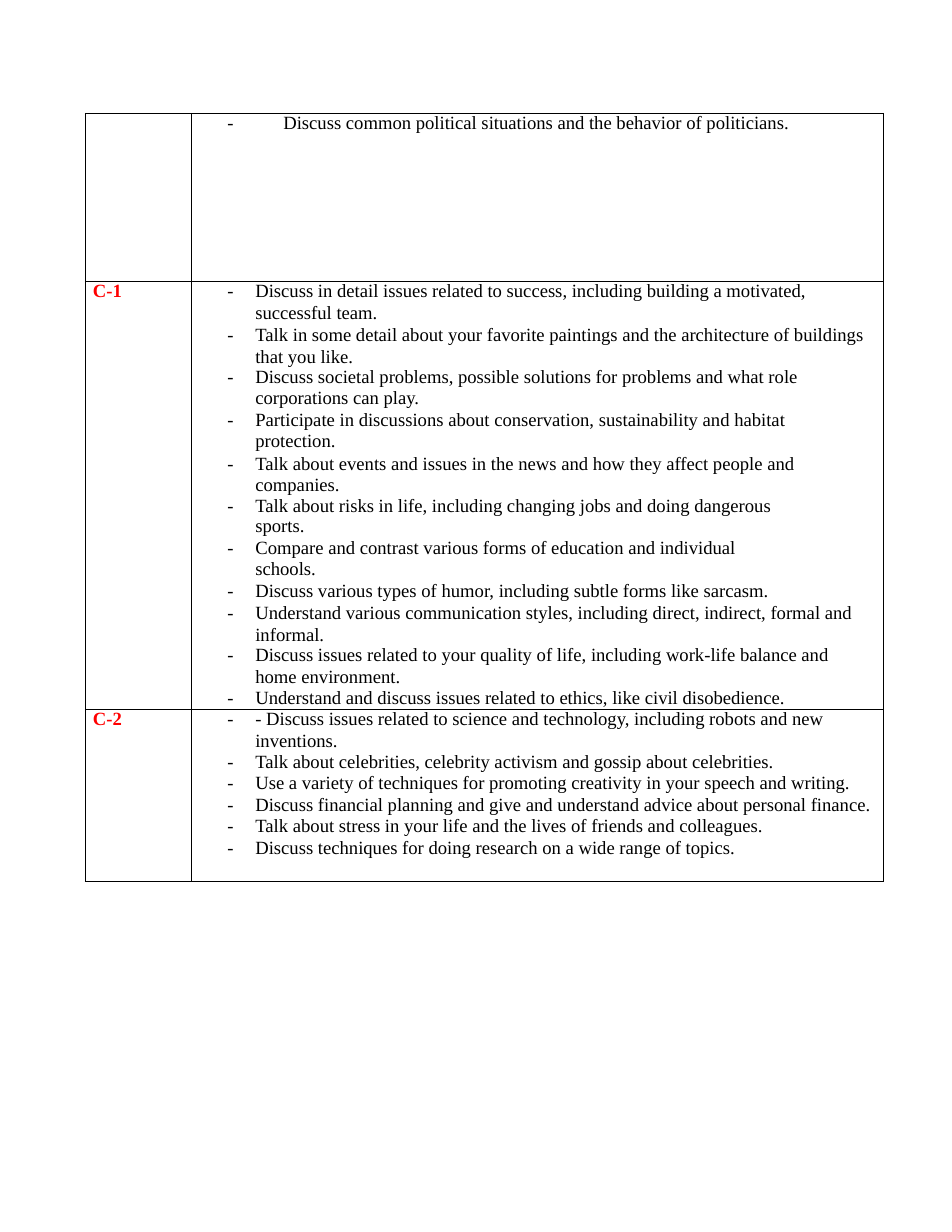
from lxml import etree
from pptx import Presentation
from pptx.dml.color import RGBColor
from pptx.oxml.ns import qn
from pptx.util import Inches, Pt

FONT = "Times New Roman"
BLACK, RED = "000000", "FF0000"
LABEL_INDENT, BULLET_INDENT, HANGING, TAB = 0.07, 0.57, -0.25, 0.57
COLUMNS = (0.95, 6.18)
ROWS = (1.5, 3.65, 1.54)

POLITICS = "-\tDiscuss common political situations and the behavior of politicians."

# Each line: text, line spacing in points, then any further format
C1 = [
    ("Discuss in detail issues related to success, including building a motivated,", 13.2, {}),
    ("successful team.", 13.8, {"bullet": False}),
    ("Talk in some detail about your favorite paintings and the architecture of buildings  that you like.",
     13.9, {"before": 0.5}),
    ("Discuss societal problems, possible solutions for problems and what role", 13.1, {}),
    ("corporations can play.", 13.8, {"bullet": False}),
    ("Participate in discussions about conservation, sustainability and habitat protection.",
     13.8, {"right": 0.5}),
    ("Talk about events and issues in the news and how they affect people and  companies.",
     13.7, {"before": 0.8, "right": 0.5}),
    ("Talk about risks in life, including changing jobs and doing dangerous sports.",
     13.2, {"right": 0.9}),
    ("Compare and contrast various forms of education and individual schools.",
     13.8, {"right": 0.9}),
    ("Discuss various types of humor, including subtle forms like sarcasm.", 13.8, {}),
    ("Understand various communication styles, including direct, indirect, formal and  informal.",
     13.9, {"before": 0.5}),
    ("Discuss issues related to your quality of life, including work-life balance and", 13.1, {}),
    ("home environment.", 13.8, {"bullet": False}),
    ("Understand and discuss issues related to ethics, like civil disobedience.", 14.1, {}),
]
C2 = [
    ("- Discuss issues related to science and technology, including robots and new", 13.2, {}),
    ("inventions.", 13.8, {"bullet": False}),
    ("Talk about celebrities, celebrity activism and gossip about celebrities.", 13.8, {}),
    ("Use a variety of techniques for promoting creativity in your speech and writing.", 13.8, {}),
    ("Discuss financial planning and give and understand advice about personal finance.", 13.8, {}),
    ("Talk about stress in your life and the lives of friends and colleagues.", 13.8, {}),
    ("Discuss techniques for doing research on a wide range of topics.", 14.1, {}),
]


def rgb(color):
    return RGBColor.from_string(color)


def add_xml(parent, tag, **attrs):
    child = etree.SubElement(parent, qn(tag))
    for name, value in attrs.items():
        child.set(name, str(value))
    return child


def write(p, text, spacing=13.4, indent=BULLET_INDENT, bullet=False, tab=False,
          before=0, right=0, color=BLACK, bold=False):
    p.line_spacing, p.space_before = Pt(spacing), Pt(before)
    pPr = p._p.get_or_add_pPr()
    pPr.set("marL", str(Inches(indent)))
    pPr.set("marR", str(Inches(right)))
    pPr.set("indent", str(Inches(HANGING if bullet else 0)))
    if bullet:
        add_xml(pPr, "a:buFont", typeface=FONT)
        add_xml(pPr, "a:buChar", char="-")
    else:
        add_xml(pPr, "a:buNone")
    if bullet or tab:
        add_xml(add_xml(pPr, "a:tabLst"), "a:tab", pos=Inches(TAB), algn="l")
    r = p.add_run()
    r.text = text
    r.font.name, r.font.size, r.font.bold = FONT, Pt(12), bold
    r.font.color.rgb = rgb(color)


def write_list(cell, lines):
    tf = cell.text_frame
    for i, (text, spacing, options) in enumerate(lines):
        p = tf.add_paragraph() if i else tf.paragraphs[0]
        write(p, text, spacing, **{"bullet": True, **options})


def format_cell(cell):
    cell.margin_left = cell.margin_right = cell.margin_top = cell.margin_bottom = 0
    tcPr = cell._tc.get_or_add_tcPr()
    for side in ("a:lnL", "a:lnR", "a:lnT", "a:lnB"):
        ln = add_xml(tcPr, side, w=Pt(0.48))
        add_xml(add_xml(ln, "a:solidFill"), "a:srgbClr", val=BLACK)
    cell.fill.background()


def add_level_table(s):
    table = s.shapes.add_table(len(ROWS), len(COLUMNS), Inches(0.76), Inches(1.01),
                               Inches(sum(COLUMNS)), Inches(sum(ROWS))).table
    table.first_row = table.horz_banding = False
    for column, width in zip(table.columns, COLUMNS):
        column.width = Inches(width)
    for row, height in zip(table.rows, ROWS):
        row.height = Inches(height)
    for cell in table.iter_cells():
        format_cell(cell)
    return table


def main():
    prs = Presentation()
    prs.slide_width, prs.slide_height = Inches(8.5), Inches(11)
    s = prs.slides.add_slide(prs.slide_layouts[6])
    table = add_level_table(s)

    # Rest of the previous level
    write(table.cell(0, 1).text_frame.paragraphs[0], POLITICS, indent=0.32, tab=True)

    # Levels with their skills
    for row, (level, skills) in enumerate((("C-1", C1), ("C-2", C2)), start=1):
        write(table.cell(row, 0).text_frame.paragraphs[0], level,
              indent=LABEL_INDENT, color=RED, bold=True)
        write_list(table.cell(row, 1), skills)

    prs.save("out.pptx")


if __name__ == "__main__":
    main()
